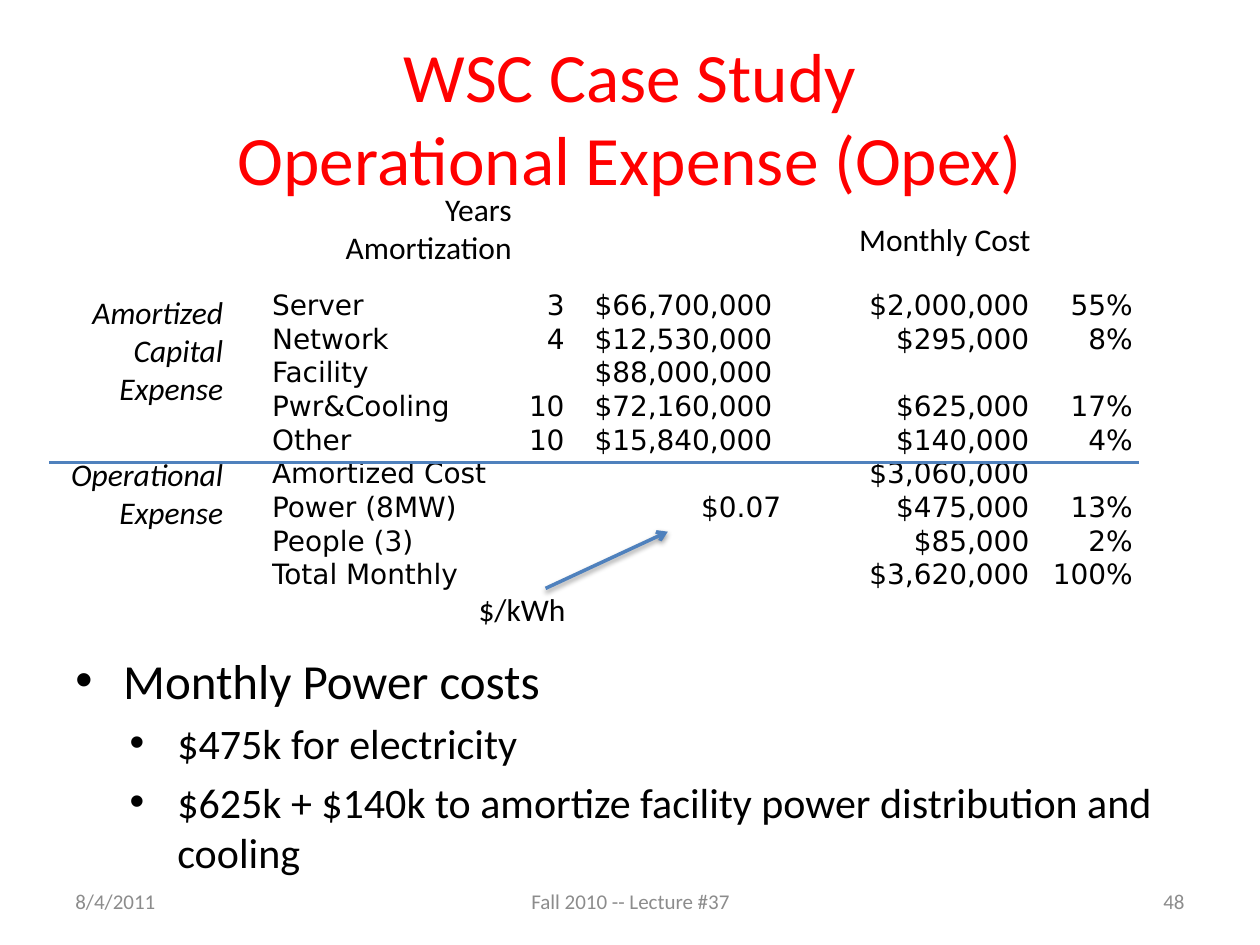
from typing import NamedTuple

from lxml.etree import SubElement
from pptx import Presentation
from pptx.dml.color import RGBColor
from pptx.enum.shapes import MSO_CONNECTOR
from pptx.enum.text import MSO_ANCHOR, MSO_AUTO_SIZE, PP_ALIGN
from pptx.oxml.ns import qn
from pptx.util import Inches, Pt

RED = RGBColor(0xFF, 0x00, 0x00)
BLACK = RGBColor(0x00, 0x00, 0x00)
GRAY = RGBColor(0x8C, 0x8C, 0x8C)
BLUE = RGBColor(0x4F, 0x81, 0xBD)

COLUMNS, ROWS = 100, 75
CELL = Inches(0.1)
LEFT, CENTER, RIGHT = PP_ALIGN.LEFT, PP_ALIGN.CENTER, PP_ALIGN.RIGHT

TABLE_COLUMNS = (19, 4.4, 17.2, 19.7, 8.2)
COSTS = (
    ("Server", "3", "$66,700,000 ", "$2,000,000", "55%"),
    ("Network", "4", "$12,530,000 ", "$295,000", "8%"),
    ("Facility", "", "$88,000,000 ", "", ""),
    ("Pwr&Cooling", "10", "$72,160,000 ", "$625,000", "17%"),
    ("Other", "10", "$15,840,000 ", "$140,000", "4%"),
    ("Amortized Cost", "", "", "$3,060,000", ""),
    ("Power (8MW)", "", "$0.07", "$475,000", "13%"),
    ("People (3)", "", "", "$85,000", "2%"),
    ("Total Monthly", "", "", "$3,620,000", "100%"),
)
BULLETS = (
    (0, "Monthly Power costs"),
    (1, "$475k for electricity"),
    (1, "$625k + $140k to amortize facility power distribution and cooling"),
)


class Box(NamedTuple):
    """An area in grid columns and rows."""
    left: float
    top: float
    width: float
    height: float

    def inner(self, left, top, width, height):
        return Box(self.left + left, self.top + top, width, height)

    def lengths(self):
        return [round(value * CELL) for value in self]


def format_para(para, size, color=BLACK, align=LEFT, font="Calibri", italic=False):
    para.alignment = align
    para.font.size = Pt(size)
    para.font.name = font
    para.font.color.rgb = color
    para.font.italic = italic


def add_label(page, box, text, align=LEFT, italic=False):
    """Add an unwrapped label with one paragraph for each line of text."""
    frame = page.shapes.add_textbox(*box.lengths()).text_frame
    frame.word_wrap = False
    frame.auto_size = MSO_AUTO_SIZE.SHAPE_TO_FIT_TEXT
    frame.text = text
    for para in frame.paragraphs:
        format_para(para, 18, align=align, italic=italic)


def add_rule(page, box):
    """Draw a blue line from the box's top left to its far corner."""
    left, top, width, height = box.lengths()
    rule = page.shapes.add_connector(
        MSO_CONNECTOR.STRAIGHT, left, top, left + width, top + height)
    rule.line.color.rgb = BLUE
    rule.line.width = Pt(2)
    effects = SubElement(rule._element.spPr, qn("a:effectLst"))
    return rule, effects


def add_arrow(page, box):
    arrow, effects = add_rule(page, box)
    SubElement(arrow.line._get_or_add_ln(), qn("a:tailEnd"), type="arrow")
    shadow = SubElement(effects, qn("a:outerShdw"), blurRad=str(Pt(3.1)),
                        dist=str(Pt(1.6)), dir="5400000", rotWithShape="0")
    color = SubElement(shadow, qn("a:srgbClr"), val=str(BLACK))
    SubElement(color, qn("a:alpha"), val="38000")


def add_title(page, box):
    title = page.shapes.title
    title.left, title.top, title.width, title.height = box.lengths()
    frame = title.text_frame
    frame.text = "WSC Case Study\vOperational Expense (Opex)"
    frame.auto_size = MSO_AUTO_SIZE.NONE
    frame.vertical_anchor = MSO_ANCHOR.MIDDLE
    format_para(frame.paragraphs[0], 39.6, RED, CENTER)


def fill_cell(cell, text, align):
    cell.fill.background()
    cell.margin_left = cell.margin_right = cell.margin_top = Inches(0.01)
    cell.margin_bottom = 0
    cell.vertical_anchor = MSO_ANCHOR.BOTTOM
    cell.text = text
    para = cell.text_frame.paragraphs[0]
    format_para(para, 16, align=align, font="DejaVu Sans")
    if not text:
        SubElement(para._p, qn("a:endParaRPr"), sz="1600")


def add_cost_table(page, box):
    table = page.shapes.add_table(
        len(COSTS), len(TABLE_COLUMNS), *box.lengths()).table
    table.first_row = table.horz_banding = False
    for column, width in zip(table.columns, TABLE_COLUMNS):
        column.width = round(width * CELL)
    for row, texts in zip(table.rows, COSTS):
        row.height = round(box.height * CELL / len(COSTS))
        for index, (cell, text) in enumerate(zip(row.cells, texts)):
            fill_cell(cell, text, RIGHT if index else LEFT)


def add_cost_study(page, box):
    """Place the cost table with its headings, side labels and markers."""
    add_cost_table(page, box.inner(17.6, 8.3, sum(TABLE_COLUMNS), 21.6))
    add_label(page, box.inner(63.3, 2.4, 15.8, 4), "Monthly Cost")
    add_rule(page, box.inner(0, 22.1, box.width, 0))
    add_label(page, box.inner(22.4, 0, 15.3, 7.1), "Years\nAmortization", RIGHT)
    add_label(page, box.inner(33.1, 31.7, 9, 4), "$/kWh")
    add_arrow(page, box.inner(39.4, 32.1, 9.7, -4.5))
    add_label(page, box.inner(1.6, 8.2, 13.2, 10.1),
              "Amortized\nCapital\nExpense", RIGHT, italic=True)
    add_label(page, box.inner(0, 21, 14.8, 7.1),
              "Operational\nExpense", RIGHT, italic=True)


def add_bullets(page, box):
    frame = page.shapes.add_textbox(*box.lengths()).text_frame
    frame.word_wrap = True
    frame.text = "\n".join(text for _, text in BULLETS)
    for para, (level, _) in zip(frame.paragraphs, BULLETS):
        size = 24 if level else 28
        para.level = level
        para.space_before = Pt(size * 0.2)
        format_para(para, size)
        properties = para._p.get_or_add_pPr()
        properties.set("marL", str(Inches(0.81 if level else 0.38)))
        properties.set("indent", str(Inches(-0.38)))
        bullet_font = properties.makeelement(qn("a:buFont"), typeface="Arial")
        bullet = properties.makeelement(qn("a:buChar"), char="•")
        properties.find(qn("a:defRPr")).addprevious(bullet_font)
        bullet_font.addnext(bullet)


def add_footer(page, box):
    entries = (
        (0, 23.3, "8/4/2011", LEFT),
        (29.2, 31.7, "Fall 2010 -- Lecture #37", CENTER),
        (66.7, 23.3, "48", RIGHT),
    )
    for left, width, text, align in entries:
        area = box.inner(left, 0, width, box.height)
        frame = page.shapes.add_textbox(*area.lengths()).text_frame
        frame.word_wrap = True
        frame.vertical_anchor = MSO_ANCHOR.MIDDLE
        frame.text = text
        format_para(frame.paragraphs[0], 12, GRAY, align)


def main():
    deck = Presentation()
    deck.slide_width, deck.slide_height = COLUMNS * CELL, ROWS * CELL
    page = deck.slides.add_slide(deck.slide_layouts.get_by_name("Title Only"))
    add_title(page, Box(5, 3, 90, 12.5))
    add_cost_study(page, Box(3.9, 14.6, 86.5, 35.7))
    add_bullets(page, Box(5, 51.1, 92.4, 18.3))
    add_footer(page, Box(5, 69.5, 90, 4))
    deck.save("out.pptx")


if __name__ == "__main__":
    main()
